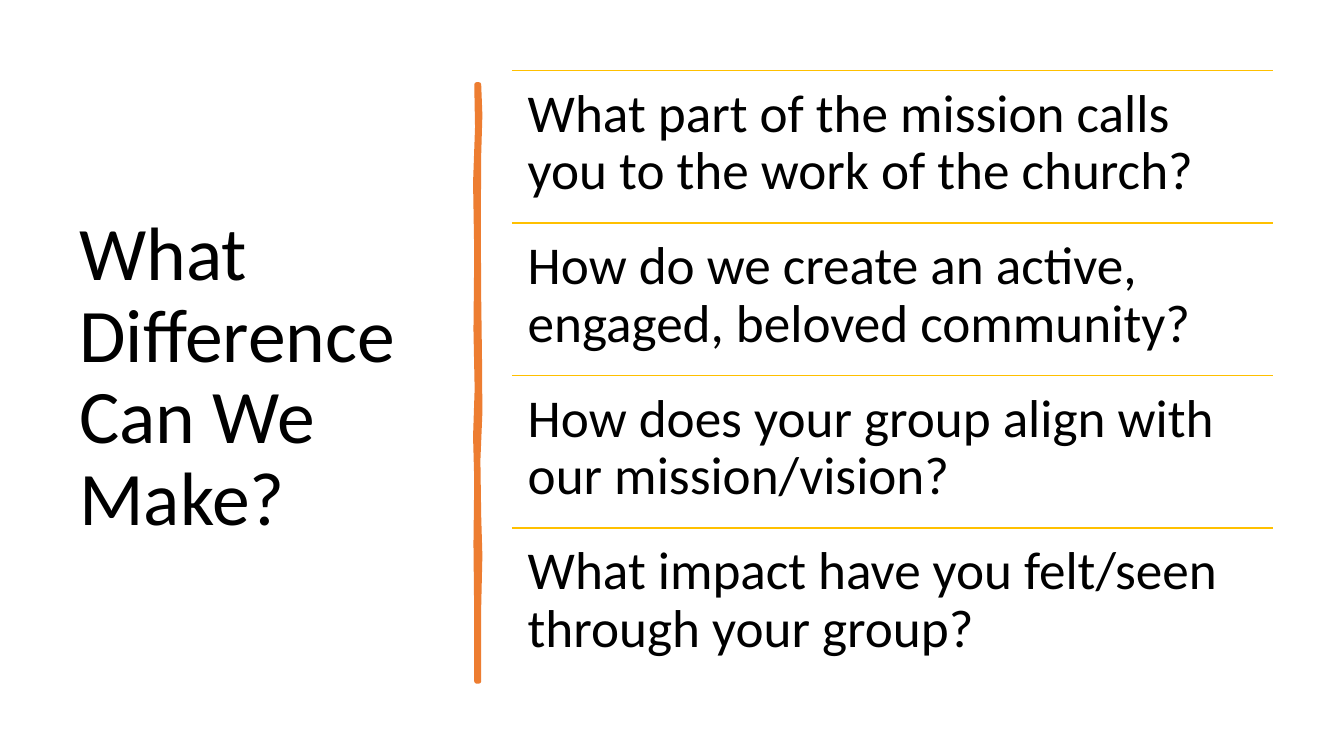
from lxml.etree import SubElement
from pptx import Presentation
from pptx.dml.color import RGBColor
from pptx.enum.shapes import MSO_CONNECTOR as Connector
from pptx.enum.text import MSO_ANCHOR as Anchor, MSO_AUTO_SIZE as AutoSize, PP_ALIGN as Align
from pptx.oxml.ns import qn
from pptx.util import Cm, Pt

COLORS = {"text": "000000", "bar": "ED7D31", "rule": "FFC000", "background": "FFFFFF"}
FONT = "Calibri"

TITLE = "What Difference Can We Make?"
QUESTIONS = [
    "What part of the mission calls you to the work of the church?",
    "How do we create an active, engaged, beloved community?",
    "How does your group align with our mission/vision?",
    "What impact have you felt/seen through your group?",
]
CONTENT_TOP = 1.78
LIST_LEFT, LIST_WIDTH, ROW_HEIGHT = 12.9, 19.18, 3.84

# Points down the right edge of the hand-drawn bar, then up its left edge.
BAR_OUTLINE = [
    (12.07, 2.13), (12.1, 2.9), (12.07, 3.9), (12.06, 5.7), (12.07, 7.5),
    (12.09, 9.0), (12.1, 10.4), (12.05, 11.6), (12.07, 13.0), (12.1, 14.0),
    (12.07, 15.3), (12.07, 17.17), (12.01, 17.17), (12.01, 15.6),
    (11.99, 13.7), (12.01, 12.1), (11.98, 11.0), (12.02, 9.8), (11.99, 8.3),
    (12.01, 6.4), (11.98, 4.6), (12.03, 3.2), (12.01, 2.13),
]


class SlideBuilder:
    def __init__(self, slide, font, colors):
        self.slide = slide
        self.font = font
        self.colors = {name: RGBColor.from_string(value) for name, value in colors.items()}
        background = slide.background.fill
        background.solid()
        background.fore_color.rgb = self.colors["background"]

    def set_text(self, shape, text, size, anchor, inset):
        frame = shape.text_frame
        frame.text = text
        frame.word_wrap = True
        frame.auto_size = AutoSize.NONE
        frame.vertical_anchor = anchor
        frame.margin_left = frame.margin_right = Cm(inset)
        frame.margin_top = frame.margin_bottom = Cm(inset)
        paragraph = frame.paragraphs[0]
        paragraph.alignment = Align.LEFT
        paragraph.line_spacing = 0.9
        font = paragraph.runs[0].font
        font.name = self.font
        font.size = Pt(size)
        font.color.rgb = self.colors["text"]

    def title(self, text, left, top, width, height):
        shape = self.slide.shapes.title
        shape.left, shape.top = Cm(left), Cm(top)
        shape.width, shape.height = Cm(width), Cm(height)
        self.set_text(shape, text, 54, Anchor.MIDDLE, 0.25)

    def text_box(self, text, left, top, width, height):
        shape = self.slide.shapes.add_textbox(Cm(left), Cm(top), Cm(width), Cm(height))
        self.set_text(shape, text, 38, Anchor.TOP, 0.4)

    def rule(self, left, top, width):
        line = self.slide.shapes.add_connector(
            Connector.STRAIGHT, Cm(left), Cm(top), Cm(left + width), Cm(top))
        line.line.color.rgb = self.colors["rule"]
        line.line.width = Pt(1)
        SubElement(line._element.spPr, qn("a:effectLst"))

    def bar(self, outline):
        points = [(Cm(x), Cm(y)) for x, y in outline]
        builder = self.slide.shapes.build_freeform(*points[0])
        builder.add_line_segments(points[1:], close=True)
        shape = builder.convert_to_shape()
        shape.shadow.inherit = False
        shape.fill.solid()
        shape.fill.fore_color.rgb = self.colors["bar"]
        shape.line.color.rgb = self.colors["bar"]
        shape.line.width = Pt(3.25)
        SubElement(shape._element.spPr.find(qn("a:ln")), qn("a:round"))


def main():
    presentation = Presentation()
    presentation.slide_width, presentation.slide_height = Cm(33.87), Cm(19.05)
    title_only = presentation.slide_layouts.get_by_name("Title Only")
    builder = SlideBuilder(presentation.slides.add_slide(title_only), FONT, COLORS)

    builder.title(TITLE, 1.75, CONTENT_TOP, 9.5, 15.52)
    builder.bar(BAR_OUTLINE)
    for row, question in enumerate(QUESTIONS):
        top = CONTENT_TOP + row * ROW_HEIGHT
        builder.rule(LIST_LEFT, top, LIST_WIDTH)
        builder.text_box(question, LIST_LEFT, top, LIST_WIDTH, ROW_HEIGHT)

    presentation.save("out.pptx")


if __name__ == "__main__":
    main()
